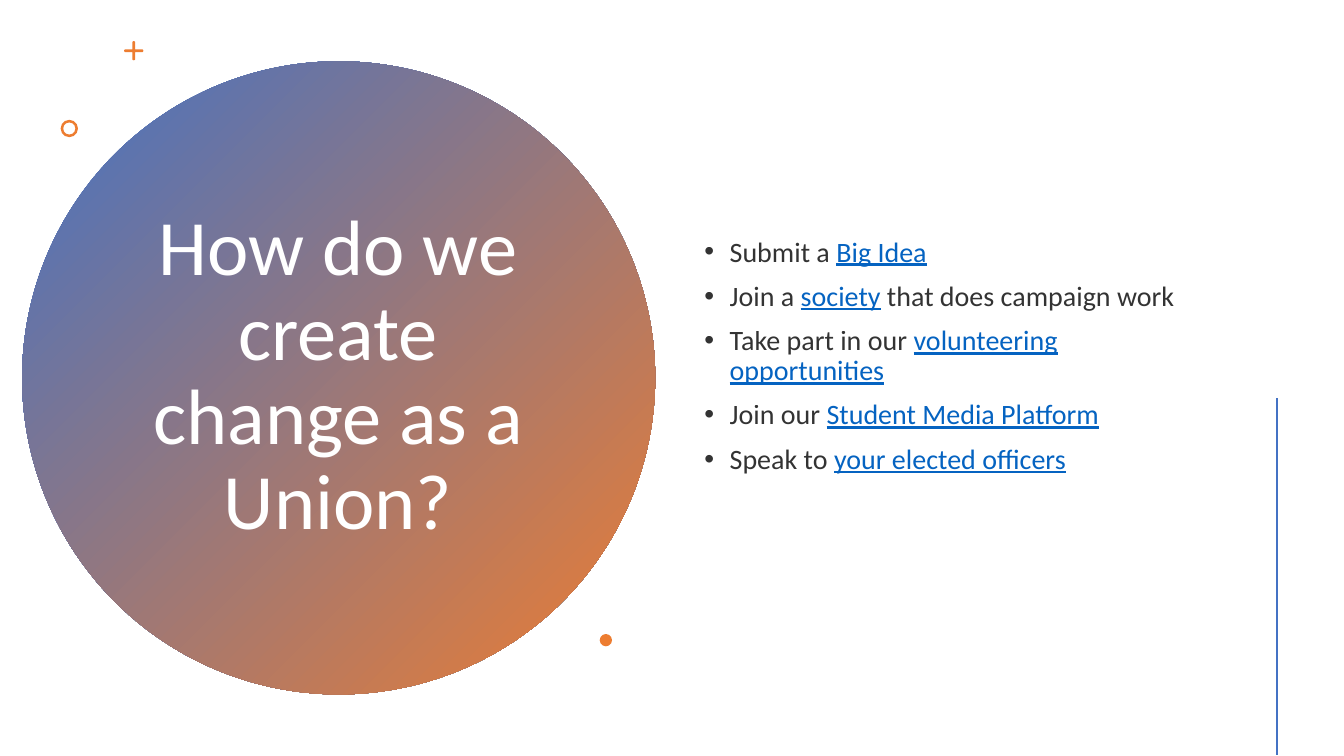
import math

import lxml.etree
import pptx
import pptx.dml.color
import pptx.enum.shapes
import pptx.enum.text
import pptx.oxml.ns
import pptx.util

Pt = pptx.util.Pt
SHAPES = pptx.enum.shapes.MSO_SHAPE
ALIGN = pptx.enum.text.PP_ALIGN
FONT = "Calibri"
BLUE, ORANGE, LINK = "4472C4", "ED7D31", "0563C1"
BLACK, WHITE = "000000", "FFFFFF"

# Each bullet is a list of (text, is_link) parts.
BULLETS = [
    [("Submit a ", False), ("Big Idea", True)],
    [("Join a ", False), ("society", True), (" that does campaign work", False)],
    [("Take part in our ", False), ("volunteering opportunities", True)],
    [("Join our ", False), ("Student Media Platform", True)],
    [("Speak to ", False), ("your elected officers", True)],
]


def rgb(colour):
    return pptx.dml.color.RGBColor.from_string(colour)


def add_child(parent, tag, **attributes):
    return lxml.etree.SubElement(parent, pptx.oxml.ns.qn(tag), **attributes)


def add_text(paragraph, text, size, colour, opacity=100, underline=None):
    run = paragraph.add_run()
    run.text = text
    run.font.name = FONT
    run.font.size = Pt(size)
    run.font.underline = underline
    run.font.color.rgb = rgb(colour)
    if opacity < 100:
        solid_colour = run.font.fill._xPr.find(".//" + pptx.oxml.ns.qn("a:srgbClr"))
        add_child(solid_colour, "a:alpha", val=str(opacity * 1000))


def add_text_frame(slide, box):
    frame = slide.shapes.add_textbox(*map(Pt, box)).text_frame
    frame.word_wrap = True
    frame.vertical_anchor = pptx.enum.text.MSO_ANCHOR.MIDDLE
    return frame


def paint(shape, colour):
    shape.shadow.inherit = False
    shape.line.fill.background()
    shape.fill.solid()
    shape.fill.fore_color.rgb = rgb(colour)


def add_shape(slide, kind, box, colour):
    shape = slide.shapes.add_shape(kind, *map(Pt, box))
    paint(shape, colour)
    return shape


def add_rounded_plus(slide, left, top, size, thickness, steps=8):
    """Draw a plus whose four arms end in half circles."""
    radius, reach = thickness / 2, size / 2
    middle_x, middle_y = left + reach, top + reach
    points = []
    for arm in range(4):
        direction = arm * math.pi / 2
        cap_x = middle_x + (reach - radius) * math.cos(direction)
        cap_y = middle_y + (reach - radius) * math.sin(direction)
        for step in range(steps + 1):
            angle = direction - math.pi / 2 + math.pi * step / steps
            points.append((cap_x + radius * math.cos(angle),
                           cap_y + radius * math.sin(angle)))
        corner = direction + math.pi / 4
        points.append((middle_x + radius * math.sqrt(2) * math.cos(corner),
                       middle_y + radius * math.sqrt(2) * math.sin(corner)))
    outline = [(Pt(x), Pt(y)) for x, y in points]
    builder = slide.shapes.build_freeform(*outline[0])
    builder.add_line_segments(outline[1:], close=True)
    paint(builder.convert_to_shape(), ORANGE)


def add_title_circle(slide, left, top, size):
    circle = add_shape(slide, SHAPES.OVAL, (left, top, size, size), BLUE)
    circle.fill.gradient()
    circle.fill.gradient_angle = 315
    for stop, position, colour in zip(circle.fill.gradient_stops, (0, 1), (BLUE, ORANGE)):
        stop.position = position
        stop.color.rgb = rgb(colour)

    frame = add_text_frame(slide, (left + 82.1, top + 57.6, 287.3, 336.2))
    paragraph = frame.paragraphs[0]
    paragraph.alignment = ALIGN.CENTER
    paragraph.line_spacing = 0.9
    add_text(paragraph, "How do we create change as a Union?", 56, WHITE)


def add_accents(slide, left, top, size):
    """Place the small orange marks around the title circle."""
    add_rounded_plus(slide, left + 72.9, top - 14.4, 13.7, 2)
    ring = add_shape(slide, SHAPES.DONUT, (left + 27.5, top + 41.8, 12.4, 12.4), ORANGE)
    ring.adjustments[0] = 0.15
    add_shape(slide, SHAPES.OVAL,
              (left + size - 39.6, top + size - 43.1, 8.8, 8.8), ORANGE)


def add_bullets(slide, box):
    frame = add_text_frame(slide, box)
    frame.margin_bottom = Pt(35.6)
    for index, parts in enumerate(BULLETS):
        paragraph = frame.add_paragraph() if index else frame.paragraphs[0]
        paragraph.alignment = ALIGN.LEFT
        paragraph.line_spacing = 0.9
        paragraph.space_before = Pt(10)
        properties = paragraph._p.get_or_add_pPr()
        properties.set("marL", str(Pt(18)))
        properties.set("indent", str(-Pt(18)))
        add_child(properties, "a:buFont", typeface="Arial")
        add_child(properties, "a:buChar", char="•")
        for text, is_link in parts:
            if is_link:
                add_text(paragraph, text, 20, LINK, underline=True)
            else:
                add_text(paragraph, text, 20, BLACK, opacity=80)


def add_side_line(slide, x, top, bottom):
    line = slide.shapes.add_connector(
        pptx.enum.shapes.MSO_CONNECTOR.STRAIGHT, Pt(x), Pt(top), Pt(x), Pt(bottom))
    line.line.color.rgb = rgb(BLUE)
    line.line.width = Pt(2)
    add_child(line._element.spPr, "a:effectLst")


def main():
    presentation = pptx.Presentation()
    presentation.slide_width = Pt(960)
    presentation.slide_height = Pt(540)
    slide = presentation.slides.add_slide(presentation.slide_layouts[6])
    circle_box = (15.8, 43.8, 452.2)
    add_title_circle(slide, *circle_box)
    add_accents(slide, *circle_box)
    add_bullets(slide, (496.1, 41, 375.8, 459.4))
    add_side_line(slide, 912.2, 284.4, 539.3)
    presentation.save("out.pptx")


if __name__ == "__main__":
    main()
